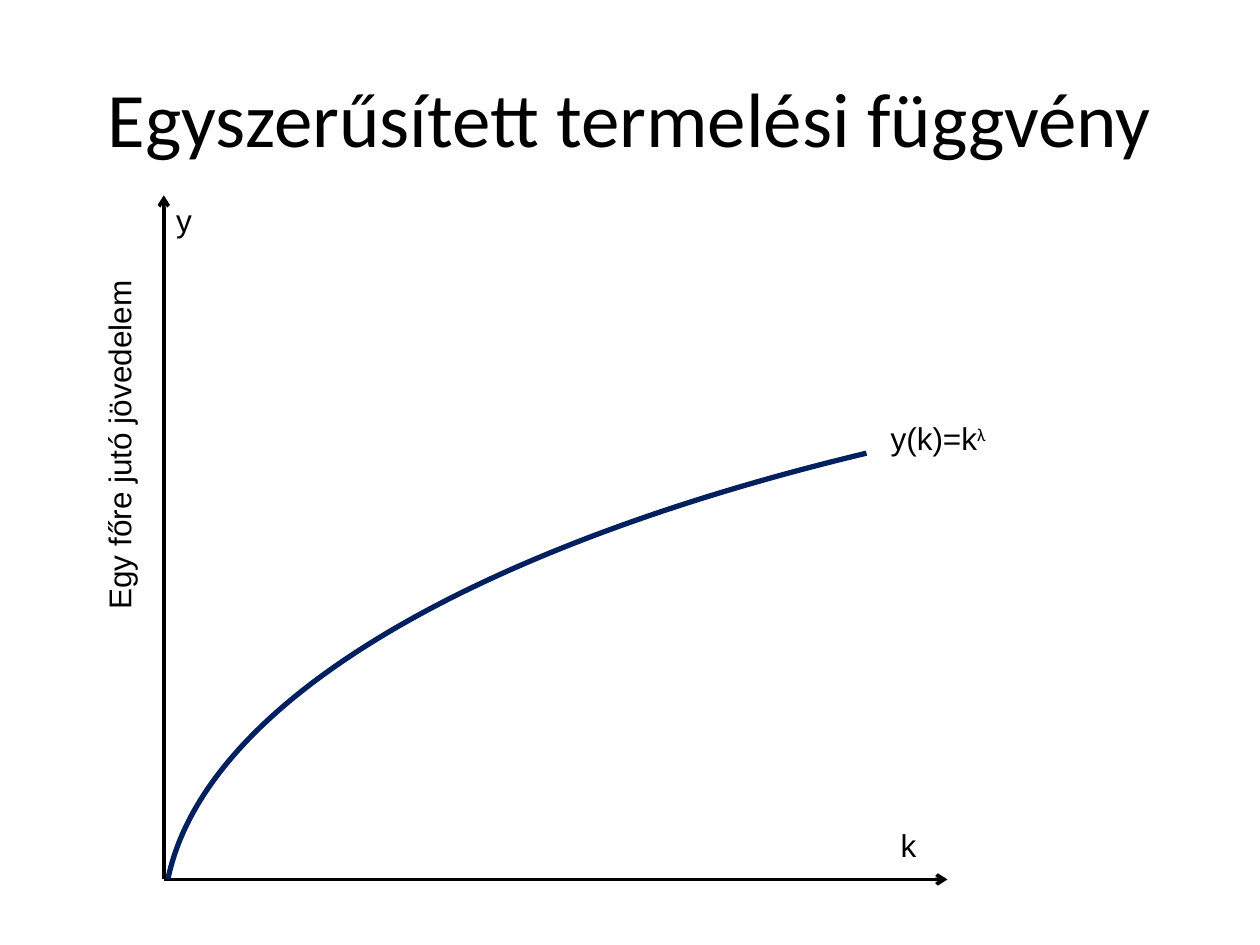
from lxml import etree
from pptx import Presentation
from pptx.dml.color import RGBColor
from pptx.enum.shapes import MSO_CONNECTOR, MSO_SHAPE
from pptx.enum.text import MSO_ANCHOR, MSO_AUTO_SIZE, PP_ALIGN
from pptx.oxml.ns import qn
from pptx.util import Pt

STRAIGHT = MSO_CONNECTOR.STRAIGHT
ARC = MSO_SHAPE.ARC
MIDDLE = MSO_ANCHOR.MIDDLE
GROW = MSO_AUTO_SIZE.SHAPE_TO_FIT_TEXT
CENTER = PP_ALIGN.CENTER
LEFT = PP_ALIGN.LEFT

BLACK = RGBColor(0x00, 0x00, 0x00)
NAVY = RGBColor(0x00, 0x20, 0x60)

ORIGIN = (93.6, 502.56)
Y_AXIS_TOP = 111.6
K_AXIS_END = 541.44
LABEL_HEIGHT = 29.08


class DiagramSlide:
    title_font = "Calibri"
    label_font = "Arial"
    title_size = 44
    label_size = 18

    def __init__(self, slide):
        self.slide = slide

    def format_run(self, run, font, size):
        run.font.name = font
        run.font.size = Pt(size)
        run.font.color.rgb = BLACK

    def text_box(self, text, left, top, width, height, font, size, align=LEFT):
        box = self.slide.shapes.add_textbox(Pt(left), Pt(top), Pt(width), Pt(height))
        frame = box.text_frame
        frame.word_wrap = True
        frame.text = text
        paragraph = frame.paragraphs[0]
        paragraph.alignment = align
        self.format_run(paragraph.runs[0], font, size)
        return box

    def title(self, text, left, top, width, height):
        heading = self.text_box(text, left, top, width, height,
                                self.title_font, self.title_size, CENTER)
        heading.text_frame.vertical_anchor = MIDDLE

    def label(self, text, left, top, width, rotation=0, exponent=None):
        caption = self.text_box(text, left, top, width, LABEL_HEIGHT,
                                self.label_font, self.label_size)
        caption.text_frame.auto_size = GROW
        caption.rotation = rotation
        if exponent:
            power = caption.text_frame.paragraphs[0].add_run()
            power.text = exponent
            self.format_run(power, self.title_font, self.label_size)
            power.font._element.set("baseline", "30000")

    def axis(self, start, end):
        axis = self.slide.shapes.add_connector(STRAIGHT, *map(Pt, start + end))
        axis.line.color.rgb = BLACK
        axis.line.width = Pt(2)
        etree.SubElement(axis.line._get_or_add_ln(), qn("a:tailEnd"), type="arrow")
        etree.SubElement(axis._element.spPr, qn("a:effectLst"))

    def curve(self, left, top, width, height, start, end):
        curve = self.slide.shapes.add_shape(ARC, Pt(left), Pt(top), Pt(width), Pt(height))
        curve.adjustments[0] = start
        curve.adjustments[1] = end
        curve.shadow.inherit = False
        curve.fill.background()
        curve.line.color.rgb = NAVY
        curve.line.width = Pt(3)


def main():
    presentation = Presentation()
    presentation.slide_width = Pt(720)
    presentation.slide_height = Pt(540)
    diagram = DiagramSlide(presentation.slides.add_slide(presentation.slide_layouts[6]))

    diagram.title("Egyszerűsített termelési függvény", 36, 21.6, 648, 90)
    diagram.axis(ORIGIN, (ORIGIN[0], Y_AXIS_TOP))
    diagram.axis(ORIGIN, (K_AXIS_END, ORIGIN[1]))
    diagram.curve(ORIGIN[0], 202.32, 1848.24, 646.56, 108.87, 124.22)
    diagram.label("y(k)=k", 501.84, 236.16, 108, exponent="λ")
    diagram.label("y", ORIGIN[0], Y_AXIS_TOP, 39.6)
    diagram.label("k", 507.6, 468.72, 39.6)
    diagram.label("Egy főre jutó jövedelem", -93.6, 179.28, 323.28, rotation=270)

    presentation.save("out.pptx")


if __name__ == "__main__":
    main()
